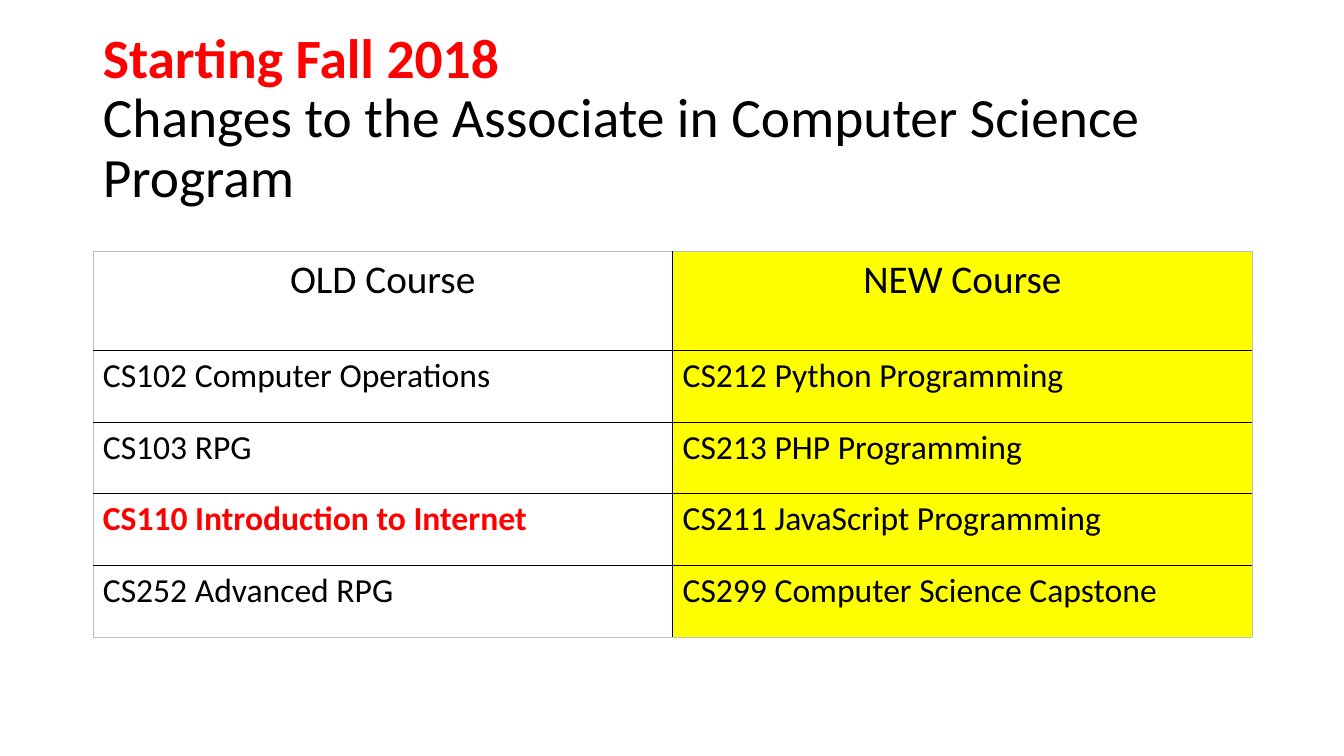
from lxml import etree
from pptx import Presentation
from pptx.dml.color import RGBColor
from pptx.enum import text
from pptx.oxml import ns
from pptx.util import Inches, Pt

BLACK = RGBColor(0x00, 0x00, 0x00)
RED = RGBColor(0xFF, 0x00, 0x00)
YELLOW = RGBColor(0xFF, 0xFF, 0x00)
GREY = RGBColor(0xBF, 0xBF, 0xBF)

LEFT, WIDTH = Inches(0.92), Inches(11.5)
HEADER_HEIGHT, ROW_HEIGHT = Inches(0.99), Inches(0.71)
COURSES = [
    ("OLD Course", "NEW Course"),
    ("CS102 Computer Operations", "CS212 Python Programming"),
    ("CS103 RPG", "CS213 PHP Programming"),
    ("CS110 Introduction to Internet", "CS211 JavaScript Programming"),
    ("CS252 Advanced RPG", "CS299 Computer Science Capstone"),
]
HIGHLIGHTED = "CS110 Introduction to Internet"


def add_run(p, words, size, color=BLACK, bold=False):
    r = p.add_run()
    r.text = words
    for name, value in {"name": "Calibri", "size": Pt(size), "bold": bold}.items():
        setattr(r.font, name, value)
    r.font.color.rgb = color


def set_borders(cell, sides):
    """Draw cell borders from a dict of side letter to (colour, width in points)."""
    tc_pr = cell._tc.get_or_add_tcPr()
    for i, side in enumerate("LRTB"):
        color, width = sides[side]
        ln = etree.Element(ns.qn(f"a:ln{side}"), w=str(Pt(width)))
        fill = etree.SubElement(ln, ns.qn("a:solidFill"))
        etree.SubElement(fill, ns.qn("a:srgbClr"), val=str(color))
        tc_pr.insert(i, ln)


def format_title(title):
    box = {"left": LEFT, "top": Inches(0.36), "width": WIDTH, "height": Inches(1.66)}
    for name, value in box.items():
        setattr(title, name, value)
    tf = title.text_frame
    tf.word_wrap = True
    tf.auto_size = text.MSO_AUTO_SIZE.NONE
    tf.vertical_anchor = text.MSO_ANCHOR.MIDDLE
    p = tf.paragraphs[0]
    p.alignment = text.PP_ALIGN.LEFT
    p.line_spacing = 0.9
    add_run(p, "Starting Fall 2018", 39.6, RED, True)
    p.add_line_break()
    add_run(p, "Changes to the Associate in Computer Science Program", 39.6)


def fill_cell(cell, words, is_header, is_new):
    p = cell.text_frame.paragraphs[0]
    p.alignment = text.PP_ALIGN.CENTER if is_header else text.PP_ALIGN.LEFT
    marked = words == HIGHLIGHTED
    add_run(p, words, 28 if is_header else 24, RED if marked else BLACK, marked)
    if is_new:
        cell.fill.solid()
        cell.fill.fore_color.rgb = YELLOW
    else:
        cell.fill.background()


def add_course_table(slide):
    rows, cols = len(COURSES), len(COURSES[0])
    height = HEADER_HEIGHT + ROW_HEIGHT * (rows - 1)
    table = slide.shapes.add_table(rows, cols, LEFT, Inches(2.49), WIDTH, height).table
    table.horz_banding = False
    inner, outer = (BLACK, 1), (GREY, 0.25)
    for i, courses in enumerate(COURSES):
        table.rows[i].height = ROW_HEIGHT if i else HEADER_HEIGHT
        for j, words in enumerate(courses):
            cell = table.cell(i, j)
            fill_cell(cell, words, i == 0, j == 1)
            set_borders(cell, {
                "L": inner if j else outer,
                "R": inner if j < cols - 1 else outer,
                "T": inner if i else outer,
                "B": inner if i < rows - 1 else outer,
            })


def main():
    prs = Presentation()
    prs.slide_width, prs.slide_height = Inches(13.33), Inches(7.5)
    slide = prs.slides.add_slide(prs.slide_layouts[5])
    format_title(slide.shapes.title)
    add_course_table(slide)
    prs.save("out.pptx")


if __name__ == "__main__":
    main()
